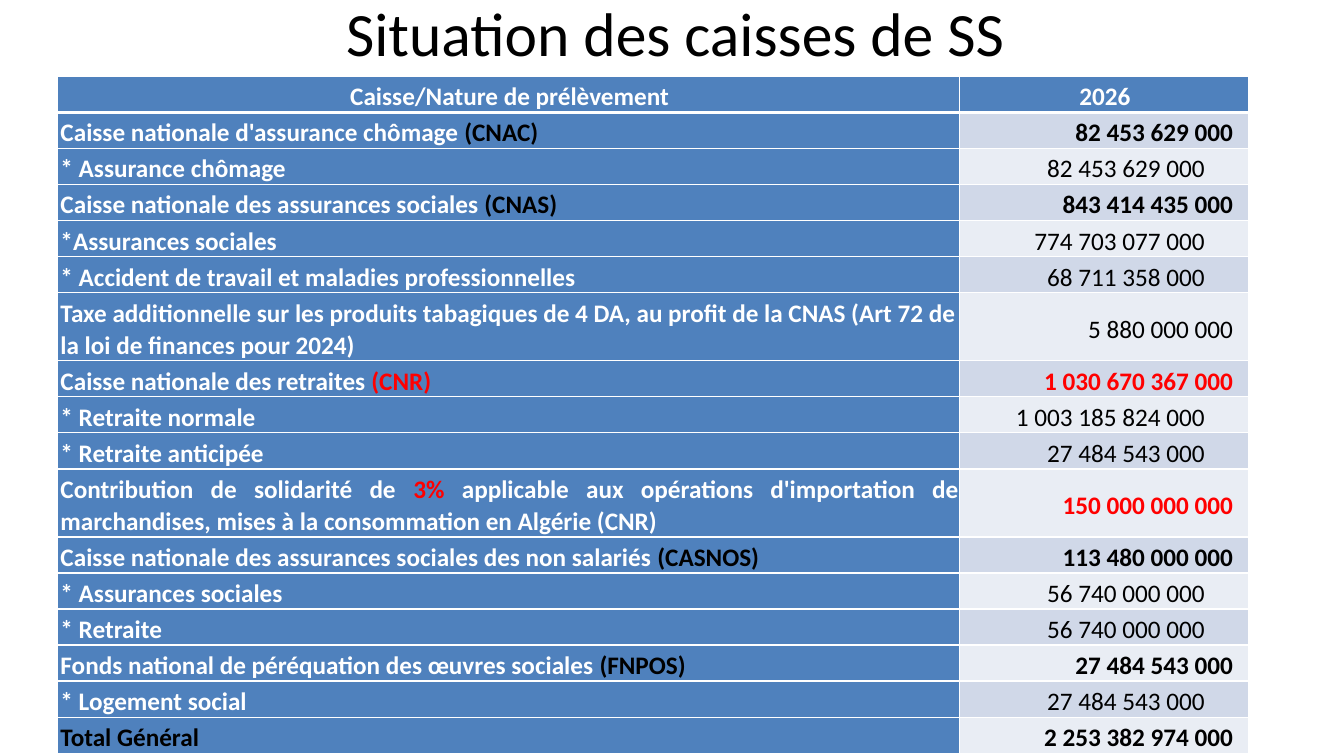
from lxml import etree
from pptx import Presentation
from pptx import util as u
from pptx.dml.color import RGBColor
from pptx.enum import text
from pptx.oxml import ns

WHITE, BLACK, RED = "FFFFFF", "000000", "FF0000"
BLUE, BAND_DARK, BAND_LIGHT = "4F81BD", "D0D8E8", "E9EDF4"
LEFT, CENTER, RIGHT, JUSTIFY = (
    text.PP_ALIGN.LEFT, text.PP_ALIGN.CENTER, text.PP_ALIGN.RIGHT, text.PP_ALIGN.JUSTIFY)


def rgb(value):
    return RGBColor.from_string(value)


class FundSlide:
    font = "Calibri"
    cell_size = 18
    edge = 0.15      # right inset of fund totals
    detail = 0.43    # right inset of detail amounts

    def __init__(self, deck):
        self.slide = deck.slides.add_slide(deck.slide_layouts[5])

    def add_runs(self, paragraph, runs, size, bold, align):
        paragraph.alignment = align
        for words, colour in runs:
            run = paragraph.add_run()
            run.text = words
            run.font.name = self.font
            run.font.size = u.Pt(size)
            run.font.bold = bold
            run.font.color.rgb = rgb(colour)

    def title(self, words, left, top, width, height):
        heading = self.slide.shapes.title
        heading.left, heading.top = u.Inches(left), u.Inches(top)
        heading.width, heading.height = u.Inches(width), u.Inches(height)
        heading.text_frame.vertical_anchor = text.MSO_ANCHOR.MIDDLE
        self.add_runs(heading.text_frame.paragraphs[0], [(words, BLACK)], 44, False, CENTER)

    def borders(self, cell, header):
        properties = cell._tc.get_or_add_tcPr()
        for side in "LRTB":
            width = 3 if header and side == "B" else 1
            line = etree.SubElement(properties, ns.qn(f"a:ln{side}"), w=str(u.Pt(width)))
            fill = etree.SubElement(line, ns.qn("a:solidFill"))
            etree.SubElement(fill, ns.qn("a:srgbClr"), val=WHITE)

    def cell(self, cell, runs, fill, bold=True, align=LEFT, inset=0.01,
             header=False, anchor=text.MSO_ANCHOR.MIDDLE):
        self.borders(cell, header)
        cell.fill.solid()
        cell.fill.fore_color.rgb = rgb(fill)
        cell.margin_left, cell.margin_top = u.Inches(0.03), u.Inches(0.04)
        cell.margin_right, cell.margin_bottom = u.Inches(inset), u.Inches(0)
        cell.vertical_anchor = anchor
        paragraph = cell.text_frame.paragraphs[0]
        paragraph.line_spacing = 1.04
        self.add_runs(paragraph, runs, self.cell_size, bold, align)

    def table(self, headings, funds, left, top, widths, row_height):
        rows = len(funds) + 1
        grid = self.slide.shapes.add_table(
            rows, len(widths), u.Inches(left), u.Inches(top),
            u.Inches(sum(widths)), u.Inches(rows * row_height)).table
        for column, width in zip(grid.columns, widths):
            column.width = u.Inches(width)
        for column, heading in enumerate(headings):
            self.cell(grid.cell(0, column), [(heading, WHITE)], BLUE,
                      align=CENTER, header=True)
        for row, (label, amount, colour, bold, inset, align) in enumerate(funds, 1):
            two_lines = sum(len(words) for words, _ in label) > 100
            anchor = text.MSO_ANCHOR.TOP if two_lines else text.MSO_ANCHOR.MIDDLE
            self.cell(grid.cell(row, 0), label, BLUE, align=align, anchor=anchor)
            self.cell(grid.cell(row, 1), [(amount, colour)],
                      BAND_DARK if row % 2 else BAND_LIGHT,
                      bold=bold, align=RIGHT, inset=inset)


def fund(name, code, amount, colour=BLACK):
    label = [(name + " ", WHITE), (f"({code})", colour)]
    return label, amount, colour, True, FundSlide.edge, LEFT


def branch(name, amount, inset=FundSlide.detail):
    return [(name, WHITE)], amount, BLACK, False, inset, LEFT


# Rows of the table
solidarity = [
    ("Contribution de solidarité de ", WHITE), ("3% ", RED),
    ("applicable aux opérations d'importation de marchandises, "
     "mises à la consommation en Algérie (CNR)", WHITE)]
FUNDS = [
    fund("Caisse nationale d'assurance chômage", "CNAC", "82 453 629 000"),
    branch("* Assurance chômage", "82 453 629 000"),
    fund("Caisse nationale des assurances sociales", "CNAS", "843 414 435 000"),
    branch("*Assurances sociales", "774 703 077 000"),
    branch("* Accident de travail et maladies professionnelles", "68 711 358 000"),
    branch("Taxe additionnelle sur les produits tabagiques de 4 DA, au profit de la CNAS "
           "(Art 72 de la loi de finances pour 2024)", "5 880 000 000", FundSlide.edge),
    fund("Caisse nationale des retraites", "CNR", "1 030 670 367 000", RED),
    branch("* Retraite normale", "1 003 185 824 000"),
    branch("* Retraite anticipée", "27 484 543 000"),
    (solidarity, "150 000 000 000", RED, True, FundSlide.edge, JUSTIFY),
    fund("Caisse nationale des assurances sociales des non salariés", "CASNOS",
         "113 480 000 000"),
    branch("* Assurances sociales", "56 740 000 000"),
    branch("* Retraite", "56 740 000 000"),
    fund("Fonds national de péréquation des œuvres sociales", "FNPOS", "27 484 543 000"),
    branch("* Logement social", "27 484 543 000"),
    ([("Total Général", BLACK)], "2 253 382 974 000", BLACK, True, FundSlide.edge, LEFT),
]


def main():
    deck = Presentation()
    deck.slide_width, deck.slide_height = u.Inches(13.33), u.Inches(7.5)
    page = FundSlide(deck)

    # Heading
    page.title("Situation des caisses de SS", 0.7, -0.31, 12, 1.25)

    # Amounts by fund
    page.table(["Caisse/Nature de prélèvement", "2026"], FUNDS,
               0.57, 0.76, [8.95, 2.86], 0.31)

    deck.save("out.pptx")


if __name__ == "__main__":
    main()
